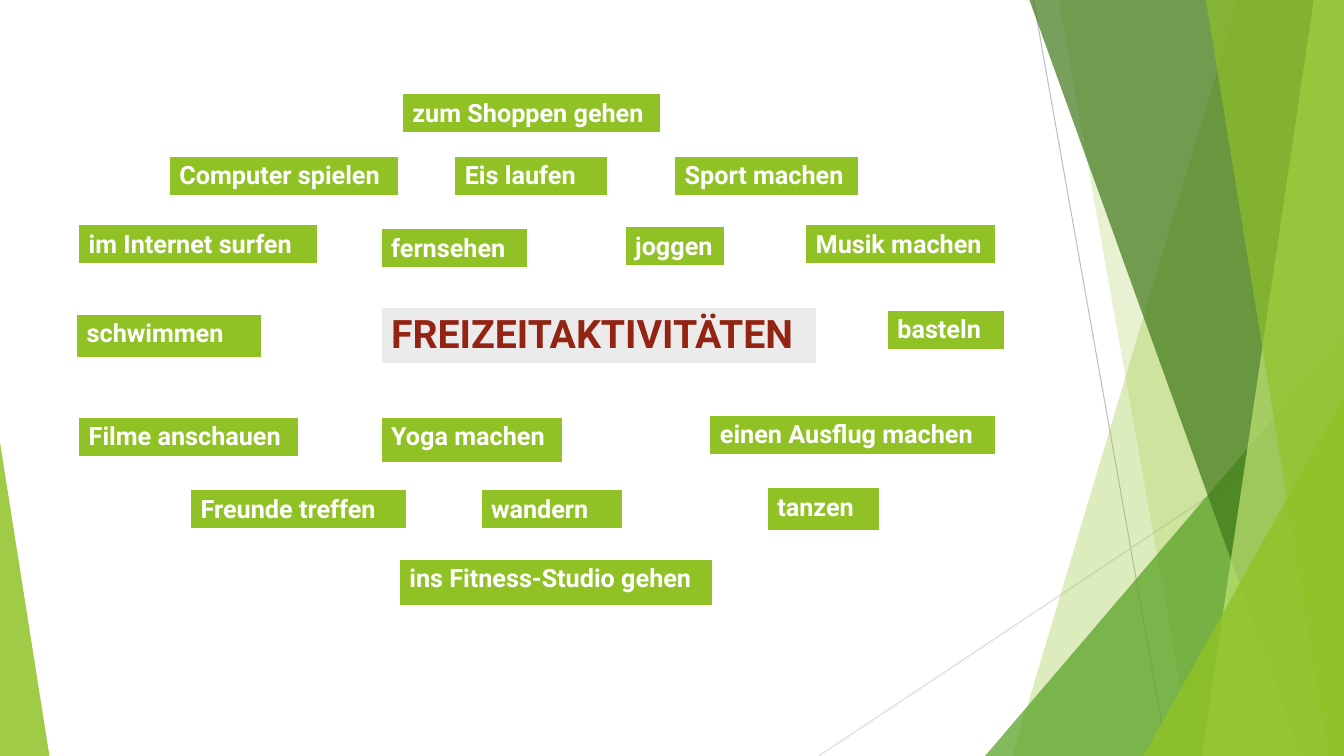
from lxml import etree
from pptx import Presentation
from pptx.dml.color import RGBColor
from pptx.enum.shapes import MSO_CONNECTOR as Connector, MSO_SHAPE as Shape
from pptx.oxml.ns import qn
from pptx.util import Pt

PX = 9144
WIDTH, HEIGHT = 1333, 750
FONT = "Roboto"

WHITE = RGBColor(0xFF, 0xFF, 0xFF)
LIME = RGBColor(0x90, 0xC2, 0x26)
PALE_LIME = RGBColor(0xC0, 0xE4, 0x74)
GREEN = RGBColor(0x54, 0xA0, 0x21)
DARK_GREEN = RGBColor(0x3F, 0x78, 0x19)
GREY = RGBColor(0xBF, 0xBF, 0xBF)
LIGHT_GREY = RGBColor(0xD9, 0xD9, 0xD9)
PANEL_GREY = RGBColor(0xEB, 0xEB, 0xEB)
RED = RGBColor(0x93, 0x23, 0x13)

BORDERS = (("a:lnL", 1), ("a:lnR", 1), ("a:lnT", 1), ("a:lnB", 3))

ACTIVITIES = [
    ("Computer spielen", 92, 62, 227, 40),
    ("zum Shoppen gehen", 323, 0, 256, 40),
    ("im Internet surfen", 2, 130, 237, 40),
    ("Musik machen", 723, 130, 188, 40),
    ("fernsehen", 302, 134, 145, 40),
    ("basteln", 804, 215, 116, 40),
    ("joggen", 544, 132, 99, 40),
    ("wandern", 401, 393, 140, 40),
    ("einen Ausflug machen", 628, 319, 283, 40),
    ("schwimmen", 0, 219, 183, 44),
    ("Sport machen", 593, 62, 183, 40),
    ("Freunde treffen", 113, 393, 214, 40),
    ("ins Fitness-Studio gehen", 320, 462, 311, 47),
    ("Filme anschauen", 2, 321, 218, 40),
    ("Yoga machen", 302, 321, 180, 46),
    ("tanzen", 685, 391, 111, 44),
    ("Eis laufen", 375, 62, 152, 40),
]


def scaled(*lengths):
    return [length * PX for length in lengths]


def paint(shape, color, opacity):
    shape.shadow.inherit = False
    shape.fill.solid()
    shape.fill.fore_color.rgb = color
    shape.line.fill.background()
    tint = shape.fill._xPr.find(qn("a:solidFill"))[0]
    etree.SubElement(tint, qn("a:alpha"), val=str(opacity * 1000))


def add_line(page, start, end, color):
    line = page.shapes.add_connector(Connector.STRAIGHT, *scaled(*start, *end))
    line.line.color.rgb = color
    line.line.width = Pt(0.75)
    etree.SubElement(line._element.spPr, qn("a:effectLst"))


def add_band(page, box, top_inset, bottom_inset, color, opacity):
    left, top, width, height = box
    right, bottom = left + width, top + height
    builder = page.shapes.build_freeform(*scaled(right - top_inset, top))
    corners = [(right, top), (right, bottom), (right - bottom_inset, bottom)]
    builder.add_line_segments([scaled(*corner) for corner in corners], close=True)
    paint(builder.convert_to_shape(), color, opacity)


def add_triangle(page, box, peak, color, opacity):
    triangle = page.shapes.add_shape(Shape.ISOSCELES_TRIANGLE, *scaled(*box))
    triangle.adjustments[0] = peak
    paint(triangle, color, opacity)


def add_facets(page, box):
    left, top, width, height = box
    right, bottom = left + width, top + height
    add_line(page, (right - 308, top), (right - 175, bottom), GREY)
    add_line(page, (right, top + 403), (right - 521, bottom), LIGHT_GREY)
    add_band(page, box, 105, 329, LIME, 30)
    add_band(page, box, 283, 150, LIME, 20)
    add_triangle(page, (right - 356, bottom - 417, 356, 417), 1, GREEN, 72)
    add_band(page, box, 312, 42, DARK_GREEN, 70)
    add_band(page, box, 30, 141, PALE_LIME, 70)
    add_band(page, box, 137, 15, LIME, 65)
    add_triangle(page, (right - 199, bottom - 357, 199, 357), 1, LIME, 80)
    add_triangle(page, (left, bottom - 311, 49, 311), 0, LIME, 85)


def add_borders(cell):
    properties = cell._tc.get_or_add_tcPr()
    for position, (side, points) in enumerate(BORDERS):
        border = etree.Element(qn(side), w=str(Pt(points)))
        fill = etree.SubElement(border, qn("a:solidFill"))
        etree.SubElement(fill, qn("a:srgbClr"), val=str(WHITE))
        properties.insert(position, border)


def add_label(page, box, text, size, color, background):
    table = page.shapes.add_table(1, 1, *scaled(*box)).table
    table.first_row = table.horz_banding = False
    cell = table.cell(0, 0)
    cell.fill.solid()
    cell.fill.fore_color.rgb = background
    add_borders(cell)
    cell.text_frame.text = text
    font = cell.text_frame.paragraphs[0].runs[0].font
    font.name, font.size, font.bold = FONT, Pt(size), True
    font.color.rgb = color


def add_word_cloud(page, left, top):
    add_label(page, (left + 302, top + 212, 432, 57),
              "FREIZEITAKTIVITÄTEN", 28, RED, PANEL_GREY)
    for text, x, y, width, height in ACTIVITIES:
        add_label(page, (left + x, top + y, width, height), text, 18, WHITE, LIME)


def main():
    deck = Presentation()
    deck.slide_width, deck.slide_height = scaled(WIDTH, HEIGHT)
    page = deck.slides.add_slide(deck.slide_layouts[6])
    add_facets(page, (0, 0, WIDTH, HEIGHT))
    add_word_cloud(page, 76, 93)
    deck.save("out.pptx")


if __name__ == "__main__":
    main()
